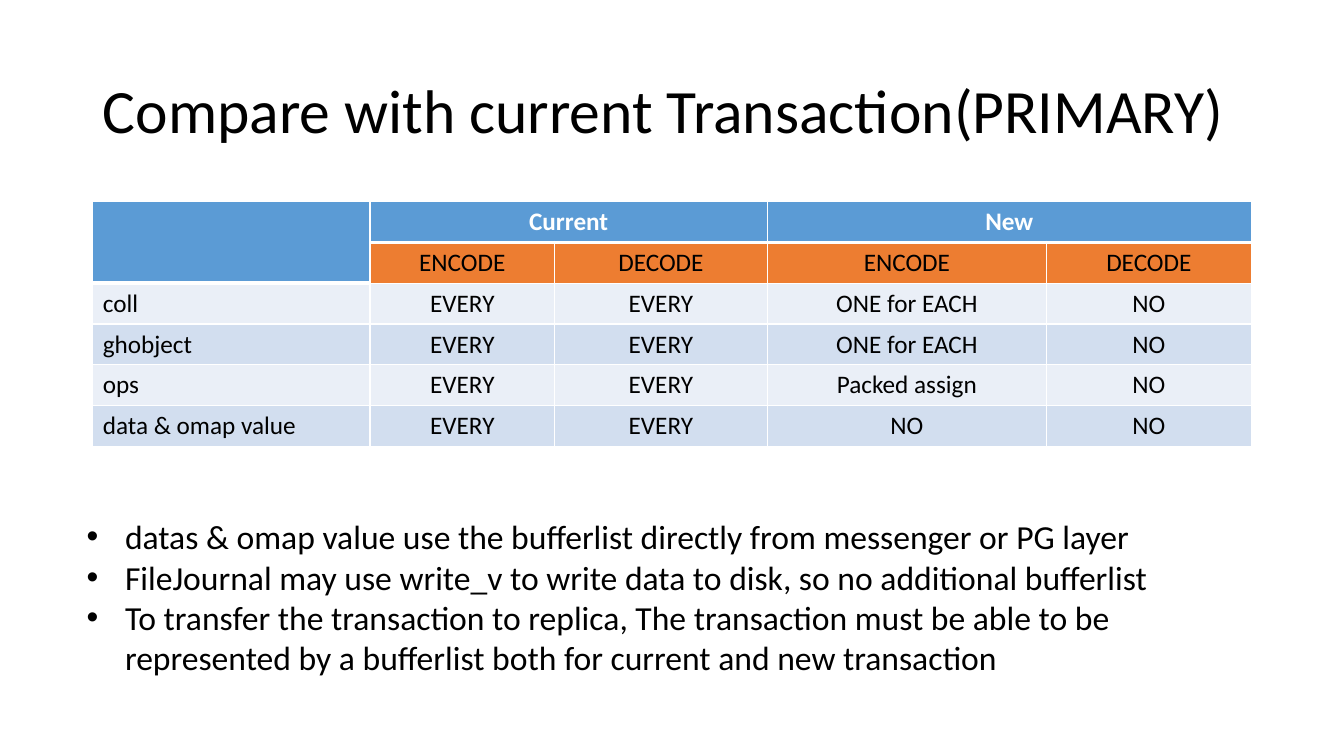
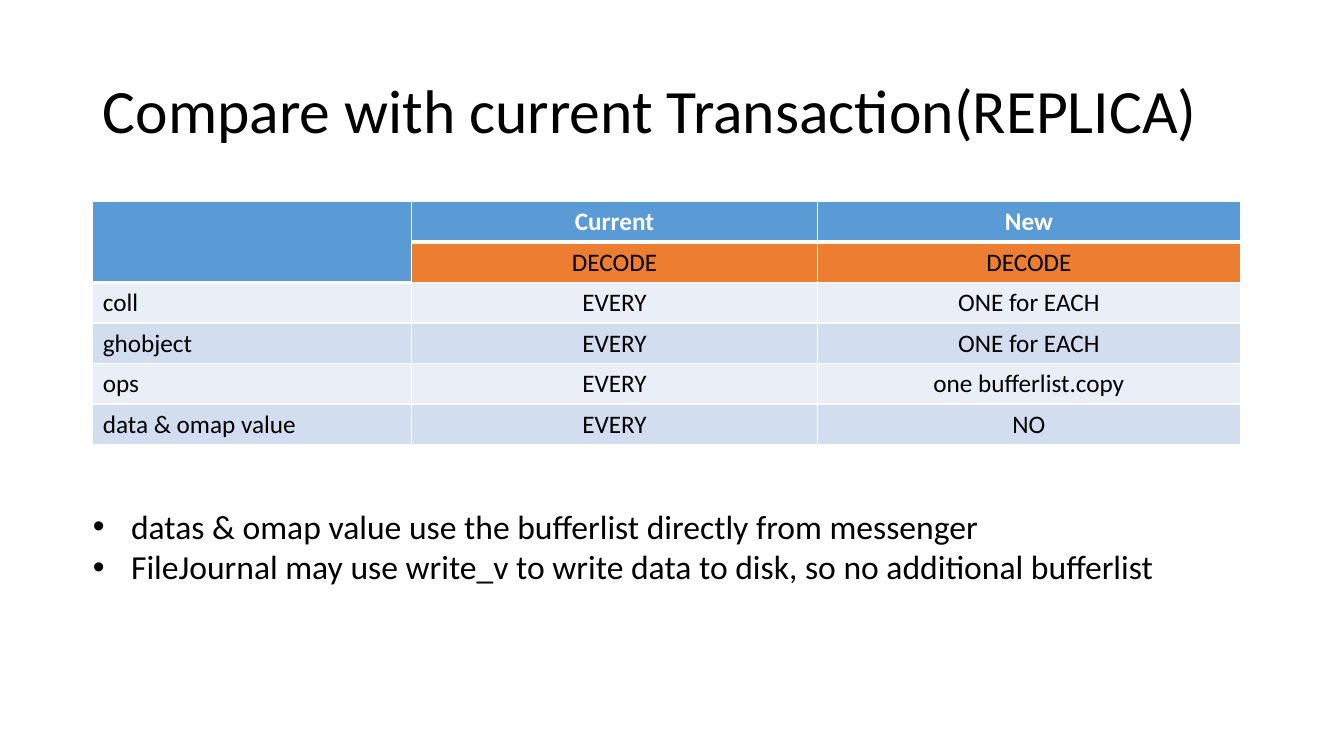
from dataclasses import dataclass

from pptx import Presentation
from pptx.dml.color import RGBColor
from pptx.enum.text import MSO_ANCHOR, MSO_AUTO_SIZE, PP_ALIGN
from pptx.oxml.ns import qn
from pptx.util import Inches, Pt
from lxml.etree import Element, SubElement

# Content: column groups, row labels with values, widths and bullets
SLIDES = [
    {
        "title": "Compare with current Transaction(PRIMARY)",
        "groups": [("Current", ["ENCODE", "DECODE"]), ("New", ["ENCODE", "DECODE"])],
        "rows": [
            ("coll", "EVERY", "EVERY", "ONE for EACH", "NO"),
            ("ghobject", "EVERY", "EVERY", "ONE for EACH", "NO"),
            ("ops", "EVERY", "EVERY", "Packed assign", "NO"),
            ("data & omap value", "EVERY", "EVERY", "NO", "NO"),
        ],
        "widths": [2.75, 1.83, 2.11, 2.77, 2.03],
        "table_height": 2.43,
        "bullets": [
            "datas & omap value use the bufferlist directly from messenger or PG layer",
            "FileJournal may use write_v to write data to disk, so no additional bufferlist",
            "To transfer the transaction to replica, The transaction must be able to be "
            "represented by a bufferlist both for current and new transaction",
        ],
        "bullet_box": (0.76, 5.07, 11.82, 1.72),
    },
    {
        "title": "Compare with current Transaction(REPLICA)",
        "groups": [("Current", ["DECODE"]), ("New", ["DECODE"])],
        "rows": [
            ("coll", "EVERY", "ONE for EACH"),
            ("ghobject", "EVERY", "ONE for EACH"),
            ("ops", "EVERY", "one bufferlist.copy"),
            ("data & omap value", "EVERY", "NO"),
        ],
        "widths": [3.16, 4.03, 4.19],
        "table_height": 2.41,
        "bullets": [
            "datas & omap value use the bufferlist directly from messenger",
            "FileJournal may use write_v to write data to disk, so no additional bufferlist",
        ],
        "bullet_box": (0.82, 4.97, 11.82, 0.91),
    },
]


@dataclass(frozen=True)
class Theme:
    font: str = "Calibri"
    title_size: int = 44
    bullet_size: int = 24
    table_size: int = 18
    text: str = "000000"
    white: str = "FFFFFF"
    header: str = "5B9BD5"
    subheader: str = "ED7D31"
    bands: tuple = ("EAEFF7", "D2DEEF")
    thin: int = 1
    thick: int = 3


THEME = Theme()
TITLE_BOX = (0.92, 0.4, 11.5, 1.45)
TABLE_LEFT, TABLE_TOP = 0.92, 2
BULLET_INDENT = 0.38
HEADER_ROWS = 2


def place(shape, box):
    shape.left, shape.top, shape.width, shape.height = map(Inches, box)


def add_text(para, text, size, color=THEME.text, bold=False):
    span = para.add_run()
    span.text = text
    span.font.name = THEME.font
    span.font.size = Pt(size)
    span.font.bold = bold
    span.font.color.rgb = RGBColor.from_string(color)


def set_borders(cell, top, bottom):
    """Draw white borders; the left and right ones are always thin."""
    properties = cell._tc.get_or_add_tcPr()
    edges = [("a:lnL", THEME.thin), ("a:lnR", THEME.thin), ("a:lnT", top), ("a:lnB", bottom)]
    for index, (tag, width) in enumerate(edges):
        line = Element(qn(tag), w=str(Pt(width)))
        fill = SubElement(line, qn("a:solidFill"))
        SubElement(fill, qn("a:srgbClr"), val=THEME.white)
        properties.insert(index, line)


def row_fill(row, column):
    if row == 0 or (row < HEADER_ROWS and column == 0):
        return THEME.header
    if row < HEADER_ROWS:
        return THEME.subheader
    return THEME.bands[(row - HEADER_ROWS) % len(THEME.bands)]


def add_comparison(page, content):
    # Expand the column groups into two header rows
    group_row, sub_row = [""], [""]
    for name, subs in content["groups"]:
        group_row += [name] + [""] * (len(subs) - 1)
        sub_row += subs
    grid = [group_row, sub_row, *content["rows"]]
    widths = content["widths"]
    table = page.shapes.add_table(
        len(grid), len(widths), Inches(TABLE_LEFT), Inches(TABLE_TOP),
        Inches(sum(widths)), Inches(content["table_height"]),
    ).table
    for column, width in zip(table.columns, widths):
        column.width = Inches(width)

    # Merge the corner and the group headings
    table.cell(0, 0).merge(table.cell(HEADER_ROWS - 1, 0))
    start = 1
    for _, subs in content["groups"]:
        if len(subs) > 1:
            table.cell(0, start).merge(table.cell(0, start + len(subs) - 1))
        start += len(subs)

    # Fill the cells; a thick line closes the blue heading
    for row, values in enumerate(grid):
        for column, text in enumerate(values):
            cell = table.cell(row, column)
            cell.fill.solid()
            cell.fill.fore_color.rgb = RGBColor.from_string(row_fill(row, column))
            heading_rows = HEADER_ROWS if column == 0 else 1
            set_borders(
                cell,
                top=THEME.thick if row == heading_rows else THEME.thin,
                bottom=THEME.thick if row < heading_rows else THEME.thin,
            )
            if text:
                para = cell.text_frame.paragraphs[0]
                para.alignment = PP_ALIGN.CENTER if column else PP_ALIGN.LEFT
                color = THEME.white if row == 0 else THEME.text
                add_text(para, text, THEME.table_size, color, bold=row == 0)


def add_bullets(body, content):
    place(body, content["bullet_box"])
    frame = body.text_frame
    frame.auto_size = MSO_AUTO_SIZE.SHAPE_TO_FIT_TEXT
    for index, bullet in enumerate(content["bullets"]):
        para = frame.paragraphs[0] if index == 0 else frame.add_paragraph()
        para.space_before = Pt(0)
        properties = para._p.get_or_add_pPr()
        properties.set("marL", str(Inches(BULLET_INDENT)))
        properties.set("indent", str(-Inches(BULLET_INDENT)))
        add_text(para, bullet, THEME.bullet_size)


def add_page(deck, layout, content):
    page = deck.slides.add_slide(layout)
    title = page.shapes.title.text_frame
    title.vertical_anchor = MSO_ANCHOR.MIDDLE
    para = title.paragraphs[0]
    para.alignment = PP_ALIGN.LEFT
    para.line_spacing = 0.9
    add_text(para, content["title"], THEME.title_size)
    add_bullets(page.placeholders[1], content)
    add_comparison(page, content)


def main():
    deck = Presentation()
    deck.slide_width, deck.slide_height = Inches(13.33), Inches(7.5)
    layout = deck.slide_layouts.get_by_name("Title and Content")
    place(layout.placeholders[0], TITLE_BOX)
    for content in SLIDES:
        add_page(deck, layout, content)
    deck.save("out.pptx")


if __name__ == "__main__":
    main()
